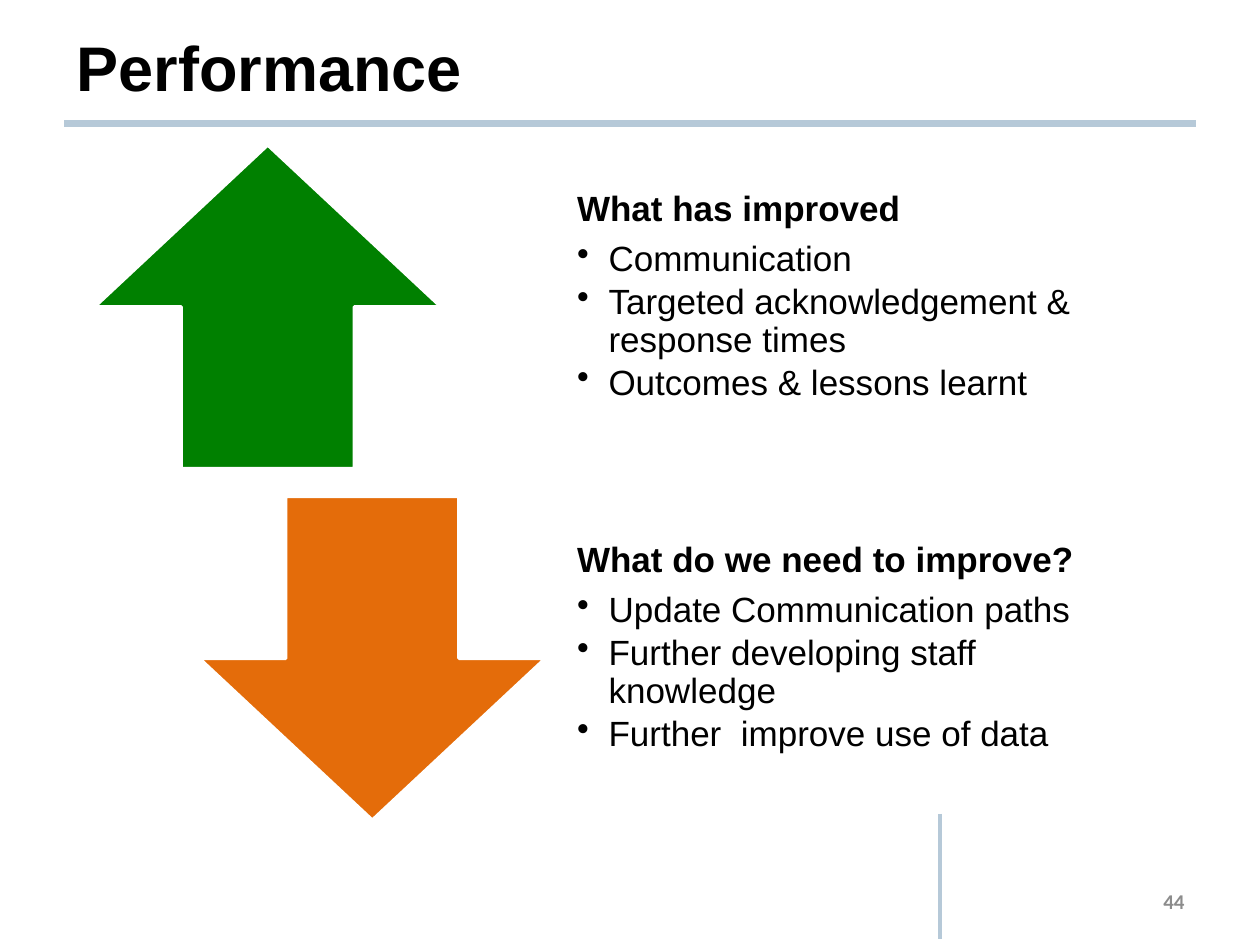
import lxml.etree
import pptx
import pptx.dml.color
import pptx.enum.shapes
import pptx.enum.text
import pptx.oxml.ns
import pptx.util

Inches, Pt = pptx.util.Inches, pptx.util.Pt
RGB = pptx.dml.color.RGBColor.from_string
ARROW = pptx.enum.shapes.MSO_SHAPE
ALIGN = pptx.enum.text.PP_ALIGN
MIDDLE = pptx.enum.text.MSO_ANCHOR.MIDDLE
qn = pptx.oxml.ns.qn

THEME = {
    "font": "Arial", "number_font": "Calibri",
    "title": 36, "body": 20, "number": 12,
    "ink": "000000", "muted": "8C8C8C", "rule": "B6C9D8", "paper": "FFFFFF",
    "better": "008000", "worse": "E46C0A",
}

# Page grid
LEFT, RIGHT = 0.51, 9.49
BAND_TOP, BAND_HEIGHT, BAND_STEP = 1.15, 2.57, 2.79
ARROW_WIDTH, TEXT_LEFT, TEXT_WIDTH = 2.75, 4.42, 4.67
INDENT = Inches(0.25)

bands = [
    (ARROW.UP_ARROW, 0.75, THEME["better"], "What has improved",
     ["Communication", "Targeted acknowledgement & response times",
      "Outcomes & lessons learnt"]),
    (ARROW.DOWN_ARROW, 1.58, THEME["worse"], "What do we need to improve?",
     ["Update Communication paths", "Further developing staff knowledge",
      "Further  improve use of data"]),
]
rules = [(LEFT, 0.98, RIGHT, 0.98, 4), (7.46, 6.46, 7.46, 7.45, 2)]


def add_run(paragraph, words, size, bold, color=THEME["ink"], font=THEME["font"]):
    run = paragraph.add_run()
    run.text = words
    run.font.size, run.font.bold, run.font.name = Pt(size), bold, font
    run.font.color.rgb = RGB(color)


prs = pptx.Presentation()
prs.slide_width, prs.slide_height = Inches(10), Inches(7.5)
slide = prs.slides.add_slide(prs.slide_layouts[5])

for x1, y1, x2, y2, weight in rules:
    rule = slide.shapes.add_connector(
        pptx.enum.shapes.MSO_CONNECTOR.STRAIGHT,
        Inches(x1), Inches(y1), Inches(x2), Inches(y2))
    rule.line.color.rgb = RGB(THEME["rule"])
    rule.line.width = Pt(weight)
    lxml.etree.SubElement(rule._element.spPr, qn("a:effectLst"))

title = slide.shapes.title
title.left, title.top = Inches(LEFT), Inches(0.14)
title.width, title.height = Inches(8.99), Inches(0.77)
title.text_frame.vertical_anchor = MIDDLE
title.text_frame.paragraphs[0].alignment = ALIGN.LEFT
add_run(title.text_frame.paragraphs[0], "Performance", THEME["title"], True)

for row, (direction, arrow_left, color, heading, points) in enumerate(bands):
    top = BAND_TOP + row * BAND_STEP
    arrow = slide.shapes.add_shape(direction, Inches(arrow_left), Inches(top),
                                   Inches(ARROW_WIDTH), Inches(BAND_HEIGHT))
    arrow.shadow.inherit = False
    arrow.fill.solid()
    arrow.fill.fore_color.rgb = RGB(color)
    arrow.line.color.rgb = RGB(THEME["paper"])
    arrow.line.width = Pt(2)

    findings = slide.shapes.add_textbox(Inches(TEXT_LEFT), Inches(top),
                                        Inches(TEXT_WIDTH), Inches(BAND_HEIGHT))
    frame = findings.text_frame
    frame.word_wrap = True
    frame.vertical_anchor = MIDDLE
    frame.margin_left = frame.margin_right = frame.margin_bottom = Inches(0.16)
    frame.margin_top = 0
    lead = frame.paragraphs[0]
    lead.line_spacing = 0.9
    lead.space_after = Pt(0.35 * THEME["body"])
    add_run(lead, heading, THEME["body"], True)
    for point in points:
        item = frame.add_paragraph()
        item.level = 1
        item.line_spacing = 0.9
        item.space_after = Pt(0.15 * THEME["body"])
        props = item._p.get_or_add_pPr()
        props.set("marL", str(INDENT))
        props.set("indent", str(-INDENT))
        lxml.etree.SubElement(props, qn("a:buChar")).set("char", "•")
        add_run(item, point, THEME["body"], False)

page_number = slide.shapes.add_textbox(Inches(7.17), Inches(6.95),
                                       Inches(2.33), Inches(0.4)).text_frame
page_number.word_wrap = True
page_number.vertical_anchor = MIDDLE
page_number.paragraphs[0].alignment = ALIGN.RIGHT
add_run(page_number.paragraphs[0], "44", THEME["number"], True,
        THEME["muted"], THEME["number_font"])

prs.save("out.pptx")
